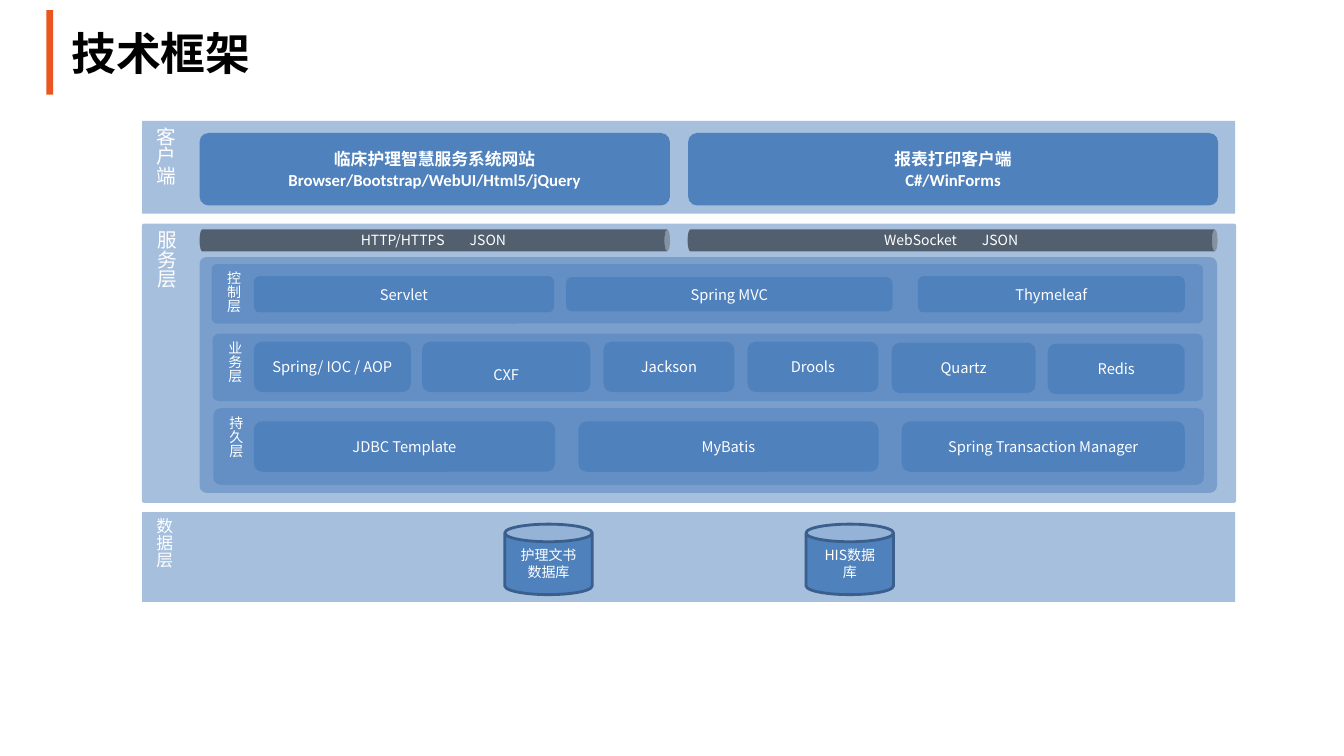
"""Builds the technical framework slide: client, service and data layers."""
from dataclasses import dataclass

from lxml.etree import SubElement
from pptx import Presentation
from pptx.dml.color import RGBColor
from pptx.enum.shapes import MSO_SHAPE
from pptx.enum.text import MSO_ANCHOR, PP_ALIGN
from pptx.oxml.ns import qn
from pptx.util import Pt

COLORS = {"accent": "EA5520", "blue": "4F81BD", "edge": "3A5F8C",
          "black": "000000", "white": "FFFFFF"}
CJK = "Noto Sans CJK SC"
LATIN = "Calibri"
INSETS = (8.6, 4.3)


@dataclass
class Band:
    x: float
    y: float
    w: float
    h: float
    radius: float
    text: str = ""
    size: float = 10


@dataclass
class Tile:
    x: float
    w: float
    text: str
    dy: float = 0
    anchor: MSO_ANCHOR = MSO_ANCHOR.MIDDLE


@dataclass
class Row:
    y: float
    h: float
    tiles: list[Tile]
    size: float = 10.5
    font: str = CJK
    bold: bool = False
    radius: float = 0.167


@dataclass
class Pipe:
    x: float
    w: float
    protocol: str


@dataclass
class Database:
    x: float
    text: str


BANDS = [
    Band(142.6, 183.6, 727.2, 168.5, 0.03),
    Band(101.5, 159.8, 781.9, 199.4, 0.007, "服务层", 14),
    Band(101.5, 365.8, 781.2, 64.1, 0, "数据层", 12),
    Band(101.5, 86.4, 781.2, 66.2, 0, "客户端", 14),
    Band(151.2, 188.6, 708.5, 42.5, 0.093, "控制层"),
    Band(151.9, 238.3, 707.8, 48.2, 0.093, "业务层"),
    Band(152.6, 291.6, 707.8, 54.7, 0.093, "持久层"),
]
ROWS = [
    Row(95, 51.8, [
        Tile(142.6, 336.2, "临床护理智慧服务系统网站\nBrowser/Bootstrap/WebUI/Html5/jQuery"),
        Tile(491.8, 378.7, "报表打印客户端\nC#/WinForms"),
    ], 12, LATIN, True, 0.125),
    Row(197.3, 25.9, [
        Tile(181.4, 214.6, "Servlet"),
        Tile(404.6, 233.3, "Spring MVC", 0.7),
        Tile(655.9, 190.8, "Thymeleaf"),
    ]),
    Row(244.1, 36, [
        Tile(181.4, 112.3, "Spring/ IOC / AOP"),
        Tile(301.7, 120.2, "CXF", anchor=MSO_ANCHOR.BOTTOM),
        Tile(431.3, 93.6, "Jackson"),
        Tile(534.2, 93.6, "Drools"),
        Tile(637.2, 103, "Quartz", 0.7),
        Tile(748.8, 97.9, "Redis", 1.4),
    ]),
    Row(301, 36, [
        Tile(181.4, 215.3, "JDBC Template"),
        Tile(413.3, 214.6, "MyBatis"),
        Tile(644.4, 202.3, "Spring Transaction Manager"),
    ]),
]
PIPES = [Pipe(142.6, 336.2, "HTTP/HTTPS"), Pipe(491.4, 378.7, "WebSocket")]
DATABASES = [Database(360.7, "护理文书数据库"), Database(576, "HIS数据库")]


def add_box(slide, kind, x, y, w, h, color, alpha=100, radius=None):
    sp = slide.shapes.add_shape(kind, Pt(x), Pt(y), Pt(w), Pt(h))
    sp.shadow.inherit = False
    sp.line.fill.background()
    sp.fill.solid()
    sp.fill.fore_color.rgb = RGBColor.from_string(COLORS[color])
    if alpha < 100:
        clr = sp._element.spPr.find(qn("a:solidFill")).find(qn("a:srgbClr"))
        SubElement(clr, qn("a:alpha"), val=str(alpha * 1000))
    if radius is not None:
        sp.adjustments[0] = radius
    return sp


def write(sp, text, size=10, font=CJK, color="white", bold=False,
          align=PP_ALIGN.CENTER, anchor=MSO_ANCHOR.MIDDLE, insets=INSETS,
          vert=None, gap=None):
    tf = sp.text_frame
    tf.word_wrap = True
    tf.vertical_anchor = anchor
    tf.margin_left = tf.margin_right = Pt(insets[0])
    tf.margin_top = tf.margin_bottom = Pt(insets[1])
    if vert:
        tf._txBody.bodyPr.set("vert", vert)
    for i, line in enumerate(text.split("\n")):
        p = tf.add_paragraph() if i else tf.paragraphs[0]
        p.alignment = align
        for part in line.partition(" ") if gap else [line]:
            r = p.add_run()
            r.text = part
            r.font.size = Pt(size)
            r.font.bold = bold
            r.font.name = font
            r.font.color.rgb = RGBColor.from_string(COLORS[color])
            rPr = r._r.get_or_add_rPr()
            SubElement(rPr, qn("a:ea"), typeface=font)
            if part == " ":
                rPr.set("spc", str(int(gap * 100)))


def draw_band(slide, band: Band) -> None:
    sp = add_box(slide, MSO_SHAPE.ROUNDED_RECTANGLE, band.x, band.y, band.w,
                 band.h, "blue", 50, band.radius)
    if band.text:
        write(sp, band.text, size=band.size, align=PP_ALIGN.LEFT,
              anchor=MSO_ANCHOR.BOTTOM, vert="eaVert")


def draw_row(slide, row: Row) -> None:
    for tile in row.tiles:
        sp = add_box(slide, MSO_SHAPE.ROUNDED_RECTANGLE, tile.x, row.y + tile.dy,
                     tile.w, row.h - (tile.dy * 2 if row.h < 30 else 0),
                     "blue", radius=row.radius)
        write(sp, tile.text, size=row.size, font=row.font, bold=row.bold,
              anchor=tile.anchor)


def draw_pipe(slide, pipe: Pipe, y: float = 163.8, h: float = 15.8) -> None:
    sp = add_box(slide, MSO_SHAPE.CAN, pipe.x + (pipe.w - h) / 2,
                 y - (pipe.w - h) / 2, h, pipe.w, "black", 50)
    sp.rotation = 90
    write(sp, f"{pipe.protocol} JSON", vert="vert270", gap=15.7)


def draw_database(slide, db: Database) -> None:
    sp = add_box(slide, MSO_SHAPE.CAN, db.x, 374.4, 62.6, 50.4, "blue")
    sp.line.color.rgb = RGBColor.from_string(COLORS["edge"])
    sp.line.width = Pt(2)
    write(sp, db.text, insets=(9.5, 3.6))


def main() -> None:
    prs = Presentation()
    prs.slide_width, prs.slide_height = Pt(960.5), Pt(540)
    slide = prs.slides.add_slide(prs.slide_layouts[6])
    add_box(slide, MSO_SHAPE.RECTANGLE, 33.1, 7.2, 5, 60.5, "accent")
    title = slide.shapes.add_textbox(Pt(43.9), Pt(14.4), Pt(600.5), Pt(46))
    write(title, "技术框架", size=32, color="black", bold=True,
          align=PP_ALIGN.LEFT, insets=(7.2, 3.6))
    for band in BANDS:
        draw_band(slide, band)
    for pipe in PIPES:
        draw_pipe(slide, pipe)
    for row in ROWS:
        draw_row(slide, row)
    for db in DATABASES:
        draw_database(slide, db)
    prs.save("out.pptx")


if __name__ == "__main__":
    main()
